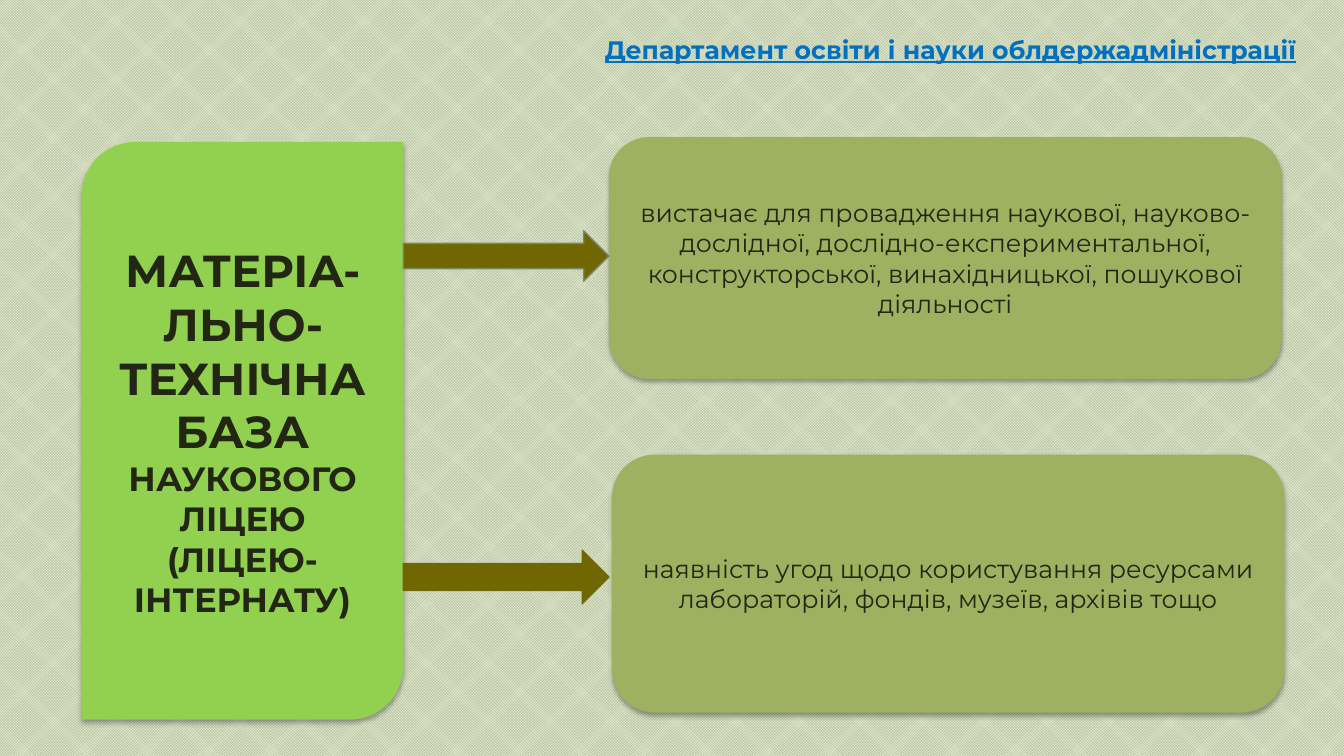
import pptx
import pptx.dml.color
import pptx.enum.dml
import pptx.enum.shapes
import pptx.enum.text
import pptx.oxml
import pptx.oxml.ns
import pptx.util

Inches = pptx.util.Inches
SHAPES = pptx.enum.shapes.MSO_SHAPE
FONT = "Montserrat"
COLORS = {
    "pattern": "A5B592",
    "background": "DFE5CA",
    "topic": "92D050",
    "card": "9EB160",
    "arrow": "706702",
    "arrow_edge": "7A866C",
    "text": "222613",
    "heading": "0070C0",
}
CARDS = [
    ((6.04, 1.36, 6.67, 2.4),
     "вистачає для провадження наукової, науково-дослідної, дослідно-експериментальної, "
     "конструкторської, винахідницької, пошукової діяльності"),
    ((6.07, 4.51, 6.67, 2.56),
     "наявність угод щодо користування ресурсами лабораторій, фондів, музеїв, архівів тощо"),
]
ARROWS = [((4, 2.29, 2.04, 0.5), "arrow_edge"), ((4, 5.46, 2.04, 0.53), "arrow")]


def rgb(name):
    """Return the named colour."""
    return pptx.dml.color.RGBColor.from_string(COLORS[name])


def soft_shadow():
    """Return an effect list with a soft shadow falling straight down."""
    return pptx.oxml.parse_xml(
        f'<a:effectLst {pptx.oxml.ns.nsdecls("a")}>'
        '<a:outerShdw blurRad="44450" dist="27940" dir="5400000" algn="ctr" rotWithShape="0">'
        '<a:srgbClr val="000000"><a:alpha val="32000"/></a:srgbClr>'
        '</a:outerShdw></a:effectLst>')


def add_run(paragraph, text, size, color="text", bold=False):
    """Add one formatted run to a paragraph."""
    run = paragraph.add_run()
    run.text = text
    run.font.size = pptx.util.Pt(size)
    run.font.name = FONT
    run.font.bold = bold
    run.font.color.rgb = rgb(color)
    return run


def add_block(slide, kind, box, color, runs):
    """Place a shadowed shape with centred text, given as (text, size, bold) runs."""
    shape = slide.shapes.add_shape(kind, *map(Inches, box))
    shape.fill.solid()
    shape.fill.fore_color.rgb = rgb(color)
    shape.line.fill.background()
    shape.shadow.inherit = False
    properties = shape.fill._xPr
    properties.replace(properties.find(pptx.oxml.ns.qn("a:effectLst")), soft_shadow())
    frame = shape.text_frame
    frame.word_wrap = True
    frame.vertical_anchor = pptx.enum.text.MSO_ANCHOR.MIDDLE
    paragraph = frame.paragraphs[0]
    paragraph.alignment = pptx.enum.text.PP_ALIGN.CENTER
    for text, size, bold in runs:
        add_run(paragraph, text, size, bold=bold)


def add_arrow(slide, box, edge):
    """Place a block arrow pointing from the topic to a card."""
    arrow = slide.shapes.add_shape(SHAPES.RIGHT_ARROW, *map(Inches, box))
    arrow.shadow.inherit = False
    arrow.fill.solid()
    arrow.fill.fore_color.rgb = rgb("arrow")
    arrow.line.color.rgb = rgb(edge)
    arrow.line.width = pptx.util.Pt(1)


def add_heading(slide, box):
    """Place the underlined department name with its text shadow."""
    frame = slide.shapes.add_textbox(*map(Inches, box)).text_frame
    frame.word_wrap = True
    frame.auto_size = pptx.enum.text.MSO_AUTO_SIZE.SHAPE_TO_FIT_TEXT
    run = add_run(frame.paragraphs[0], "Департамент освіти і науки облдержадміністрації",
                  18, "heading", True)
    run.font.underline = True
    fill = run._r.rPr.find(pptx.oxml.ns.qn("a:solidFill"))
    fill.addnext(soft_shadow())


def build_slide(presentation):
    """Build the slide on the lyceum's facilities."""
    slide = presentation.slides.add_slide(presentation.slide_layouts[6])
    fill = slide.background.fill
    fill.patterned()
    fill.pattern = pptx.enum.dml.MSO_PATTERN.SMALL_CHECKER_BOARD
    fill.fore_color.rgb = rgb("pattern")
    fill.back_color.rgb = rgb("background")
    add_block(slide, SHAPES.ROUND_2_DIAG_RECTANGLE, (0.81, 1.41, 3.19, 5.73), "topic", [
        ("МАТЕРІА-ЛЬНО-ТЕХНІЧНА БАЗА", 32, True),
        (" НАУКОВОГО ЛІЦЕЮ (ЛІЦЕЮ-ІНТЕРНАТУ)", 24, True),
    ])
    for box, text in CARDS:
        add_block(slide, SHAPES.ROUNDED_RECTANGLE, box, "card", [(text, 18, False)])
    for box, edge in ARROWS:
        add_arrow(slide, box, edge)
    add_heading(slide, (5.9, 0.29, 7.43, 0.4))


def main():
    """Create and save the presentation."""
    presentation = pptx.Presentation()
    presentation.slide_width = Inches(13.33)
    presentation.slide_height = Inches(7.5)
    build_slide(presentation)
    presentation.save("out.pptx")


if __name__ == "__main__":
    main()
